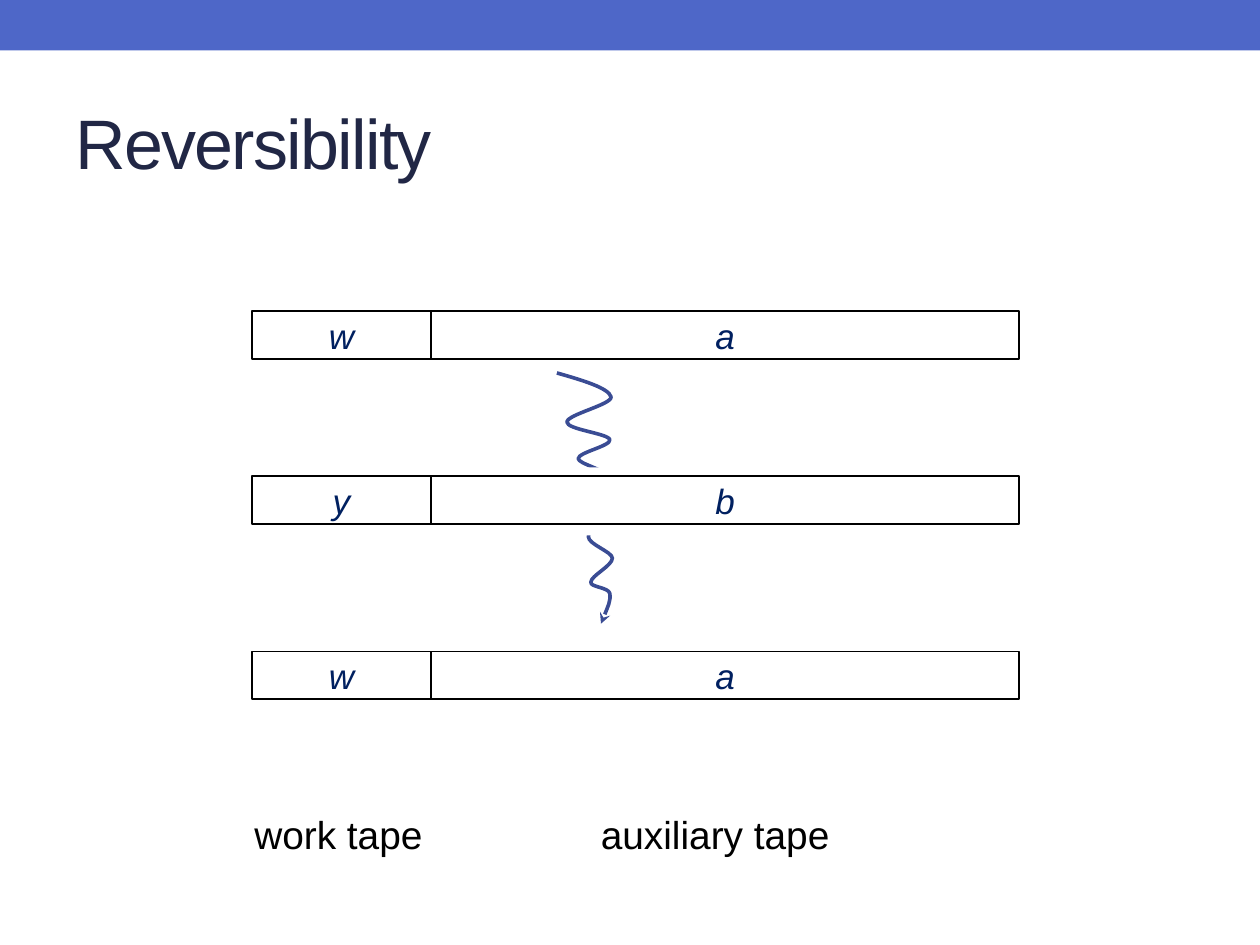
import pptx
import pptx.util
import pptx.dml.color
import pptx.enum.shapes
import pptx.enum.text
import pptx.oxml
import pptx.oxml.ns
from pptx.util import Inches

COLORS = {
    "band": "4E67C8",
    "title": "212745",
    "cell_text": "002060",
    "squiggle": "3A4C94",
    "black": "000000",
    "white": "FFFFFF",
}
FONT = "Arial"
ANCHOR = pptx.enum.text.MSO_ANCHOR
ALIGN = pptx.enum.text.PP_ALIGN

WORK_TAPE = (2, 1.42)  # left, width
AUXILIARY_TAPE = (3.42, 4.67)
LABEL_LEFT = 0.5
LABEL_STOPS = (1.42, 4.17)

# Hundredths of an inch: a start point, then three points for each curve.
SQUIGGLE_START = (442, 296)
SQUIGGLE_POINTS = [
    (463, 302), (483, 308), (485, 315), (486, 321), (450, 329), (450, 335),
    (450, 341), (483, 344), (484, 349), (485, 354), (459, 359), (459, 364),
    (459, 368), (481, 373), (482, 378), (483, 383), (467, 389), (467, 394),
    (467, 400), (483, 404), (483, 409), (483, 414), (466, 420), (467, 426),
    (467, 432), (486, 438), (486, 443), (486, 449), (469, 457), (469, 462),
    (468, 466), (483, 466), (484, 471), (485, 477), (477, 495), (477, 495),
]


def rgb(name):
    return pptx.dml.color.RGBColor.from_string(COLORS[name])


def xml_element(tag, **attributes):
    element = pptx.oxml.parse_xml(f"<{tag} {pptx.oxml.ns.nsdecls('a')}/>")
    for name, value in attributes.items():
        element.set(name, str(value))
    return element


def format_span(span, size, color, italic=None):
    span.font.name = FONT
    span.font.size = pptx.util.Pt(size)
    span.font.color.rgb = rgb(color)
    span.font.italic = italic


def add_rectangle(page, left, top, width, height, fill=None, line=None):
    box = page.shapes.add_shape(
        pptx.enum.shapes.MSO_SHAPE.RECTANGLE,
        Inches(left), Inches(top), Inches(width), Inches(height))
    box.shadow.inherit = False
    if fill:
        box.fill.solid()
        box.fill.fore_color.rgb = rgb(fill)
    else:
        box.fill.background()
    if line:
        box.line.color.rgb = rgb(line)
        box.line.width = pptx.util.Pt(1)
    else:
        box.line.fill.background()
    return box


def add_cell(page, tape, top, text):
    left, width = tape
    box = add_rectangle(page, left, top, width, 0.38, line="black")
    frame = box.text_frame
    frame.margin_left = frame.margin_right = 0
    frame.margin_top = frame.margin_bottom = Inches(0.02)
    frame.vertical_anchor = ANCHOR.MIDDLE
    frame.text = text
    para = frame.paragraphs[0]
    para.alignment = ALIGN.CENTER
    format_span(para.runs[0], 20, "cell_text", italic=True)


def add_title(page, text):
    title = page.shapes.title
    title.left, title.top = Inches(0.5), Inches(0.58)
    title.width, title.height = Inches(9), Inches(1.08)
    title.text_frame.text = text
    title.text_frame.vertical_anchor = ANCHOR.MIDDLE
    para = title.text_frame.paragraphs[0]
    para.alignment = ALIGN.LEFT
    span = para.runs[0]
    format_span(span, 40, "title")
    span.font._element.set("spc", "-100")


def add_squiggle(page):
    """Draw the curved arrow, turning each three line segments into a Bézier."""
    builder = page.shapes.build_freeform(*SQUIGGLE_START, scale=Inches(0.01))
    builder.add_line_segments(SQUIGGLE_POINTS, close=False)
    squiggle = builder.convert_to_shape()
    squiggle.shadow.inherit = False
    squiggle.fill.background()
    squiggle.line.color.rgb = rgb("squiggle")
    squiggle.line.width = pptx.util.Pt(2.08)
    squiggle.line._get_or_add_ln().append(xml_element("a:tailEnd", type="stealth"))

    segments = squiggle._element.xpath(".//a:lnTo")
    outline = segments[0].getparent()
    for start in range(0, len(segments), 3):
        curve = xml_element("a:cubicBezTo")
        for segment in segments[start:start + 3]:
            curve.append(segment[0])
            outline.remove(segment)
        outline.append(curve)


def add_tape_labels(page, labels):
    box = page.shapes.add_textbox(
        Inches(LABEL_LEFT), Inches(5.92), Inches(9), Inches(0.88))
    frame = box.text_frame
    frame.word_wrap = True
    frame.margin_bottom = 0
    frame.vertical_anchor = ANCHOR.BOTTOM
    frame.text = "".join("\t" + label for label in labels)
    para = frame.paragraphs[0]
    stops = xml_element("a:tabLst")
    for stop in LABEL_STOPS:
        stops.append(xml_element("a:tab", pos=Inches(stop), algn="l"))
    para._p.get_or_add_pPr().append(stops)
    for span in para.runs:
        format_span(span, 22.2, "black")


def main():
    deck = pptx.Presentation()
    deck.slide_width, deck.slide_height = Inches(10), Inches(7.5)
    page = deck.slides.add_slide(deck.slide_layouts[5])

    add_rectangle(page, 0, 0, 10, 0.4, fill="band")
    add_title(page, "Reversibility")
    add_tape_labels(page, ("work tape", "auxiliary tape"))
    for top in (2.47, 5.17):
        add_cell(page, WORK_TAPE, top, "w")
        add_cell(page, AUXILIARY_TAPE, top, "a")
    add_squiggle(page)
    add_cell(page, WORK_TAPE, 3.78, "y")
    # The white patch interrupts the squiggle behind the middle tape.
    add_rectangle(page, 4.17, 3.71, 1.25, 0.54, fill="white")
    add_cell(page, AUXILIARY_TAPE, 3.78, "b")

    deck.save("out.pptx")


if __name__ == "__main__":
    main()
